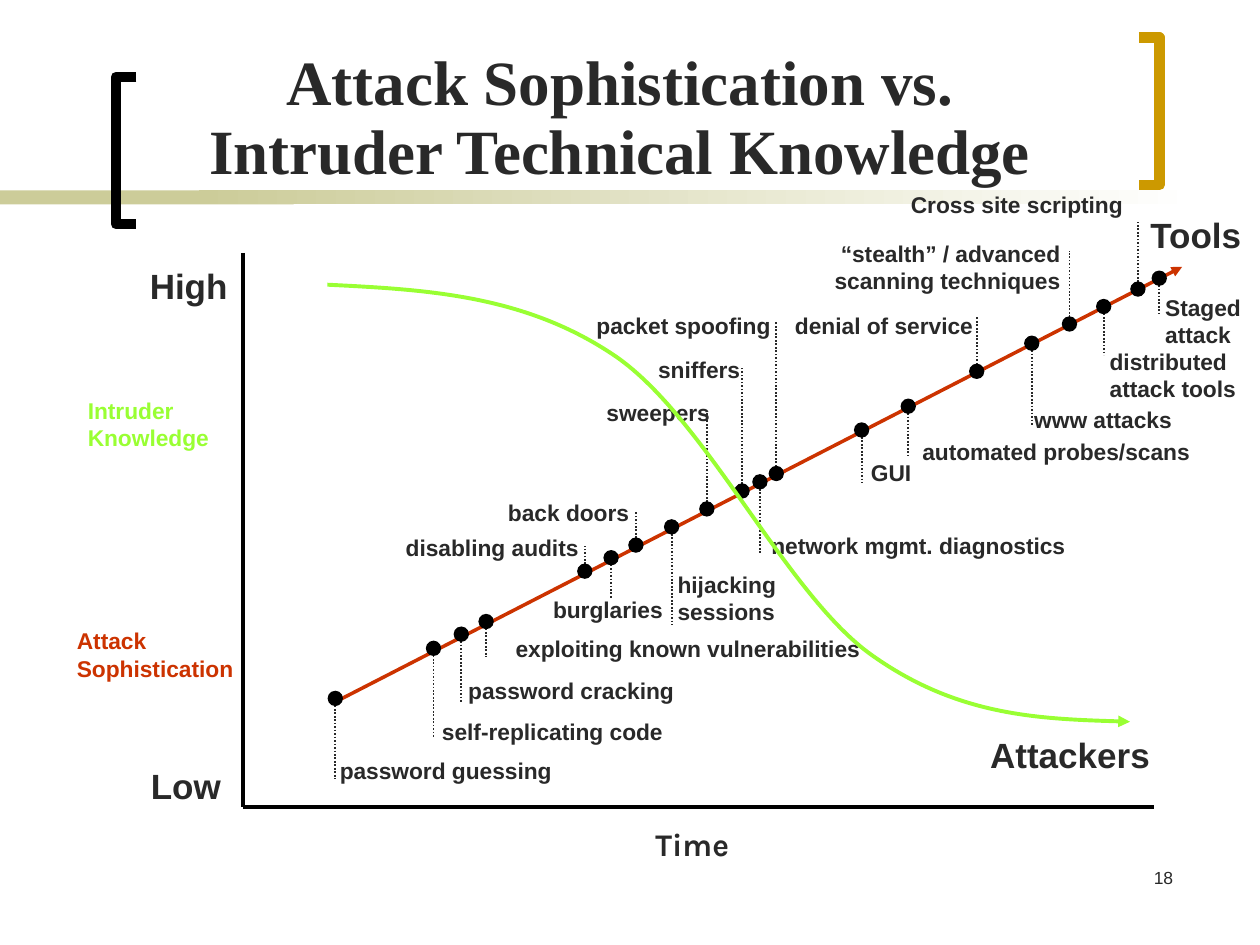
from typing import NamedTuple

from pptx import Presentation
from pptx.dml.color import RGBColor
from pptx.enum.dml import MSO_LINE
from pptx.enum.shapes import MSO_CONNECTOR, MSO_SHAPE
from pptx.enum.text import PP_ALIGN
from pptx.oxml.ns import qn
from pptx.util import Cm, Pt
from lxml.etree import SubElement

INK, BLACK, GREEN, RED = "292929", "000000", "99FF33", "CC3300"
SAND, GOLD, WHITE = "CCCC99", "CC9900", "FFFFFF"
LEFT, CENTER, RIGHT = PP_ALIGN.LEFT, PP_ALIGN.CENTER, PP_ALIGN.RIGHT
LINE_HEIGHT, DOT = 0.84, 0.31


class Box(NamedTuple):
    left: float
    top: float
    width: float
    height: float

    def inner(self, x, y, width, height):
        return Box(self.left + x, self.top + y, width, height)

    def point(self, x, y):
        return Cm(self.left + x), Cm(self.top + y)

    def lengths(self):
        return [Cm(value) for value in self]


class Attack(NamedTuple):
    """Dot position, far end of the stem, and place of the label, in cm from the plot corner."""
    text: str
    x: float
    stem_end: float
    left: float
    top: float
    width: float
    align: PP_ALIGN = RIGHT
    wrap: bool = False


ATTACKS = [
    Attack("password guessing", 1.86, 10.6, 1.7, 10.04, 5, LEFT),
    Attack("self-replicating code", 3.84, 9.78, 3.76, 9.25, 5.21, LEFT),
    Attack("password cracking", 4.4, 9.05, 4.29, 8.41, 4.88, LEFT),
    Attack("exploiting known vulnerabilities", 4.9, 8.13, 4.88, 7.57, 7.8),
    Attack("disabling audits", 6.89, 5.9, 2.82, 5.54, 4.19),
    Attack("burglaries", 7.42, 6.97, 5.84, 6.79, 2.87),
    Attack("back doors", 7.92, 5.19, 4.93, 4.83, 3.1),
    Attack("hijacking\nsessions", 8.64, 7.5, 8.51, 6.28, 2.77, LEFT),
    Attack("sweepers", 9.35, 3.18, 6.94, 2.82, 2.72),
    Attack("sniffers", 10.06, 2.29, 7.98, 1.94, 2.29),
    Attack("network mgmt. diagnostics", 10.42, 6.08, 10.09, 5.49, 6.73),
    Attack("packet spoofing", 10.75, 1.38, 6.66, 1.07, 4.22),
    Attack("GUI", 12.47, 4.63, 12.3, 4.02, 1.42),
    Attack("automated probes/scans", 13.41, 4.07, 13.16, 3.61, 6.17),
    Attack("denial of service", 14.79, 1.3, 10.67, 1.07, 4.29),
    Attack("www attacks", 15.9, 3.46, 15.7, 2.95, 3.99, LEFT),
    Attack("“stealth” / advanced scanning techniques", 16.66, -0.05, 11, -0.4, 5.72, RIGHT, True),
    Attack("distributed\nattack tools", 17.35, 2.06, 17.22, 1.78, 3.2, LEFT),
    Attack("Cross site scripting", 18.04, -0.63, 12.98, -1.37, 5),
    Attack("Staged\vattack", 18.47, 1.22, 18.34, 0.69, 2.16, LEFT),
]
# text, x, y, width, height, size, colour
CHART_LABELS = [
    ("High", -2.13, 0.11, 2.16, 1.12, 20, INK),
    ("Low", -2.11, 10.19, 1.98, 1.12, 20, INK),
    ("Tools", 18.04, -0.93, 2.46, 1.14, 20, INK),
    ("Attackers", 14.81, 9.56, 3.81, 1.14, 20, INK),
    ("Intruder\nKnowledge", -3.38, 2.77, 3.1, 1.42, 13, GREEN),
    ("Attack\nSophistication", -3.6, 7.42, 3.86, 1.42, 13, RED),
]
KNOWLEDGE_CURVE = [
    (1.7, 0.64), (3.69, 0.74), (5.69, 0.84), (7.52, 2.09), (9.35, 3.36),
    (10.95, 6.89), (12.68, 8.11), (14.4, 9.33), (16.16, 9.4), (17.88, 9.45),
]


def colour(value):
    return RGBColor.from_string(value)


def add_text(page, box, text, size, ink=INK, align=LEFT, font="Arial", bold=True, wrap=False):
    frame = page.shapes.add_textbox(*box.lengths()).text_frame
    frame.word_wrap = wrap
    frame.text = text
    for para in frame.paragraphs:
        para.alignment = align
        for span in para.runs:
            span.font.name, span.font.size, span.font.bold = font, Pt(size), bold
            span.font.color.rgb = colour(ink)
    return frame


def style_line(shape, ink, width, arrow=False):
    shape.line.color.rgb = colour(ink)
    shape.line.width = Pt(width)
    if arrow:
        SubElement(shape.line._get_or_add_ln(), qn("a:tailEnd"), type="triangle")


def add_line(page, start, end, ink, width, arrow=False):
    line = page.shapes.add_connector(MSO_CONNECTOR.STRAIGHT, *start, *end)
    style_line(line, ink, width, arrow)
    SubElement(line._element.spPr, qn("a:effectLst"))
    return line


def add_solid(page, kind, box, fill):
    shape = page.shapes.add_shape(kind, *box.lengths())
    shape.shadow.inherit = False
    shape.fill.solid()
    shape.fill.fore_color.rgb = colour(fill)
    shape.line.fill.background()
    return shape


def add_outline(page, points, ink, width, arrow=False):
    builder = page.shapes.build_freeform(*points[0])
    builder.add_line_segments(points[1:], close=False)
    shape = builder.convert_to_shape()
    shape.shadow.inherit = False
    shape.fill.background()
    style_line(shape, ink, width, arrow)
    return shape


def bend(shape):
    """Turn every three straight segments into one cubic curve."""
    track = shape._element.find(".//" + qn("a:path"))
    segments = track.findall(qn("a:lnTo"))
    for first in range(0, len(segments), 3):
        cubic = SubElement(track, qn("a:cubicBezTo"))
        for segment in segments[first:first + 3]:
            cubic.append(segment[0])
            track.remove(segment)


def add_bracket(page, box, ink, opens_right):
    spine, tip = (0, box.width) if opens_right else (box.width, 0)
    corners = [(tip, 0), (spine, 0), (spine, box.height), (tip, box.height)]
    add_outline(page, [box.point(*corner) for corner in corners], ink, 6)


def add_header(page, box):
    add_solid(page, MSO_SHAPE.RECTANGLE, box.inner(0, 3.84, 5.92, 0.28), SAND)
    fade = add_solid(page, MSO_SHAPE.RECTANGLE, box.inner(4.01, 3.84, 20.12, 0.28), SAND)
    fade.fill.gradient()
    fade.fill.gradient_angle = 0
    for stop, shade in zip(fade.fill.gradient_stops, (SAND, WHITE)):
        stop.color.rgb = colour(shade)
    add_bracket(page, box.inner(2.34, 1.55, 0.41, 2.97), BLACK, True)
    add_bracket(page, box.inner(22.96, 0.76, 0.41, 2.97), GOLD, False)
    title = add_text(page, box.inner(1.85, 1.04, 21.29, 1.9),
                     "Attack Sophistication vs.\vIntruder Technical Knowledge",
                     36, align=CENTER, font="Times New Roman", wrap=True)
    title.margin_left = title.margin_right = title.margin_top = title.margin_bottom = 0
    title.paragraphs[0].line_spacing = 0.9


def add_attack(page, plot, attack):
    dot_y = 8.98 - 0.51 * (attack.x - 1.86)
    stem = add_line(page, plot.point(attack.x, dot_y), plot.point(attack.x, attack.stem_end), INK, 1)
    stem.line.dash_style = MSO_LINE.ROUND_DOT
    add_solid(page, MSO_SHAPE.OVAL,
              plot.inner(attack.x - DOT / 2, dot_y - DOT / 2, DOT, DOT), BLACK)
    two_lines = attack.wrap or "\n" in attack.text or "\v" in attack.text
    label = plot.inner(attack.left, attack.top, attack.width, 1.42 if two_lines else LINE_HEIGHT)
    add_text(page, label, attack.text, 13, align=attack.align, wrap=attack.wrap)


def add_chart_area(page, plot):
    corner = plot.point(0, plot.height)
    add_line(page, plot.point(0, 0), corner, BLACK, 2.25)
    add_line(page, corner, plot.point(plot.width, plot.height), BLACK, 2.25)
    add_line(page, plot.point(1.86, 9.05), plot.point(18.93, 0.28), RED, 2, arrow=True)
    for attack in ATTACKS:
        add_attack(page, plot, attack)
    for text, x, y, width, height, size, ink in CHART_LABELS:
        add_text(page, plot.inner(x, y, width, height), text, size, ink)
    bend(add_outline(page, [plot.point(*spot) for spot in KNOWLEDGE_CURVE], GREEN, 2.25, arrow=True))
    add_text(page, plot.inner(6.73, 11.41, 4.65, 1.02), "Time", 18,
             align=CENTER, font="Karla", wrap=True)


def main():
    deck = Presentation()
    deck.slide_width, deck.slide_height = Cm(25.4), Cm(19.05)
    page = deck.slides.add_slide(deck.slide_layouts[6])
    add_header(page, Box(0, 0, 25.4, 4.6))
    add_chart_area(page, Box(4.9, 5.1, 18.36, 11.16))
    add_text(page, Box(18.62, 17.35, 5.28, 1.27), "18", 10, align=RIGHT, bold=False, wrap=True)
    deck.save("out.pptx")


if __name__ == "__main__":
    main()
